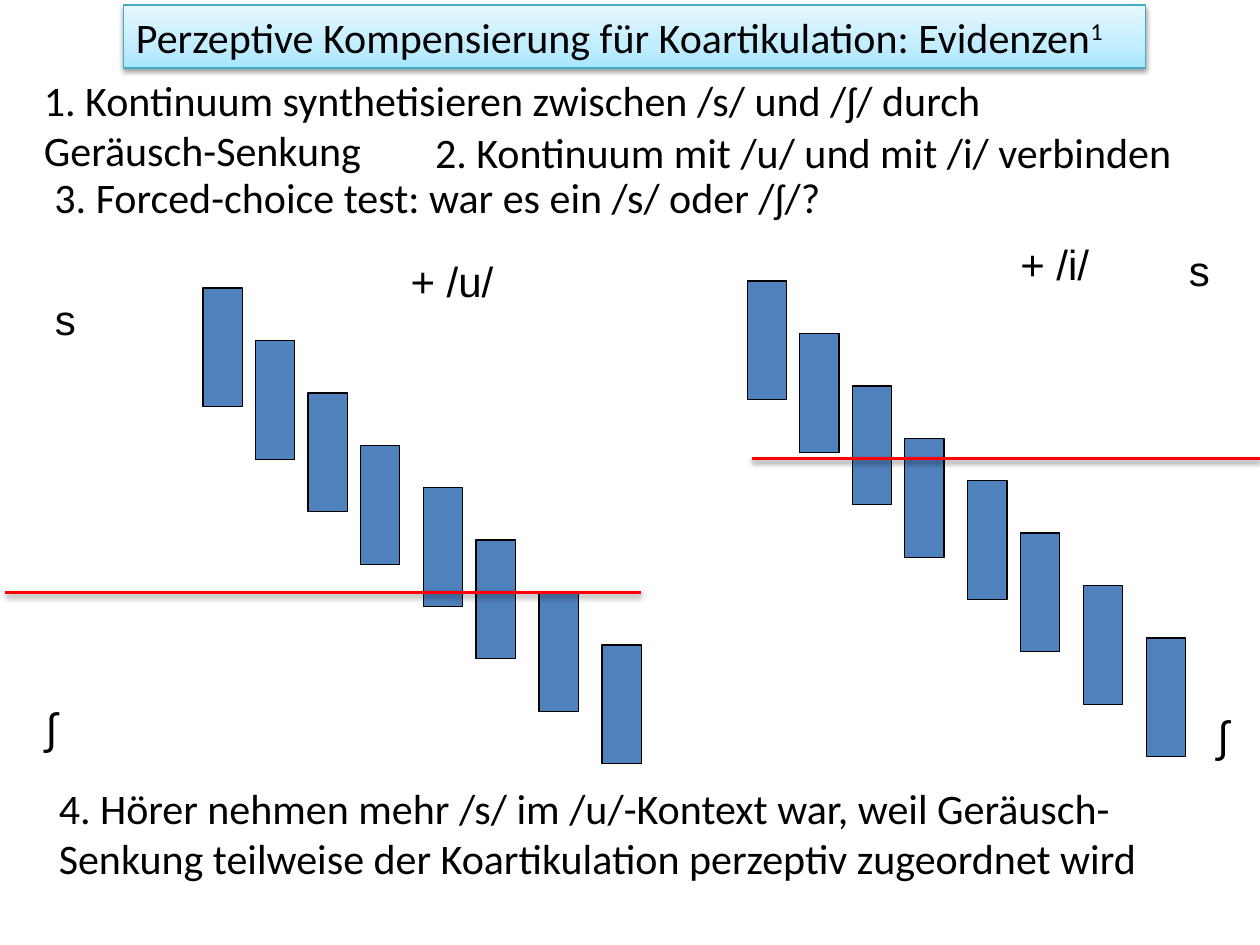
from copy import deepcopy

from pptx import Presentation
from pptx.dml.color import RGBColor
from pptx.enum.shapes import MSO_CONNECTOR as CONNECTOR, MSO_SHAPE as SHAPE
from pptx.enum.text import MSO_ANCHOR as ANCHOR, MSO_AUTO_SIZE as AUTO_SIZE, PP_ALIGN as ALIGN
from pptx.oxml import parse_xml
from pptx.oxml.ns import nsdecls, qn
from pptx.util import Pt

COLORS = {
    "text": "000000",
    "bar": "4F81BD",
    "boundary": "FF0000",
    "title_line": "46AAC5",
    "title_bottom": "A7E6FF",
    "title_middle": "C1EDFF",
    "title_top": "E7F8FF",
}
COLORS = {name: RGBColor.from_string(value) for name, value in COLORS.items()}


def write(frame, text, font="Calibri", wrap=True, superscript=""):
    frame.word_wrap = wrap
    frame.auto_size = AUTO_SIZE.NONE
    frame.vertical_anchor = ANCHOR.TOP
    para = frame.paragraphs[0]
    para.alignment = ALIGN.LEFT
    for part, baseline in ((text, 0), (superscript, 30000)):
        if part:
            span = para.add_run()
            span.text = part
            span.font.name = font
            span.font.size = Pt(24)
            span.font.color.rgb = COLORS["text"]
            if baseline:
                span.font._element.set("baseline", str(baseline))


def add_shadow(shape):
    shape._element.spPr.append(parse_xml(
        f'<a:effectLst {nsdecls("a")}>'
        f'<a:outerShdw blurRad="{Pt(3.1)}" dist="{Pt(1.6)}" dir="5400000" rotWithShape="0">'
        '<a:srgbClr val="000000"><a:alpha val="38000"/></a:srgbClr>'
        '</a:outerShdw></a:effectLst>'))


deck = Presentation()
deck.slide_width, deck.slide_height = Pt(720), Pt(540)
page = deck.slides.add_slide(deck.slide_layouts[5])

title = page.shapes.title
title.left, title.top, title.width, title.height = Pt(70.5), Pt(2.8), Pt(584), Pt(36)
title.fill.gradient()
title.fill.gradient_angle = 90
stop_list = title._element.spPr.find(".//" + qn("a:gsLst"))
stop_list.insert(1, deepcopy(stop_list[0]))
stops = ((0, "title_bottom"), (0.35, "title_middle"), (1, "title_top"))
for stop, (position, color) in zip(title.fill.gradient_stops, stops):
    stop.position = position
    stop.color.rgb = COLORS[color]
title.line.color.rgb = COLORS["title_line"]
title.line.width = Pt(0.75)
add_shadow(title)
write(title.text_frame, "Perzeptive Kompensierung für Koartikulation: Evidenzen", superscript="1")

bar_steps = [(0, 0), (30, 30), (60, 60), (90, 90), (126, 114), (156, 144), (192, 174), (228, 204)]
for series_left, series_top in ((116, 164.5), (427, 160.5)):
    for step_x, step_y in bar_steps:
        bar = page.shapes.add_shape(
            SHAPE.RECTANGLE, Pt(series_left + step_x), Pt(series_top + step_y), Pt(22.5), Pt(68))
        bar.shadow.inherit = False
        bar.fill.solid()
        bar.fill.fore_color.rgb = COLORS["bar"]
        bar.line.color.rgb = COLORS["text"]
        bar.line.width = Pt(0.75)

labels = [
    (18, 39, 555, 65.5, "1. Kontinuum synthetisieren zwischen /s/ und /ʃ/ durch Geräusch-Senkung", {}),
    (241.5, 68.5, 459, 36, "2. Kontinuum mit /u/ und mit /i/ verbinden", {}),
    (24, 94.5, 478, 36, "3. Forced-choice test: war es ein /s/ oder /ʃ/?", {}),
    (26.5, 443.5, 660, 65.5, "4. Hörer nehmen mehr /s/ im /u/-Kontext war, weil Geräusch-Senkung "
     "teilweise der Koartikulation perzeptiv zugeordnet wird", {}),
    (227.5, 142.5, 62, 36, "+ /u/", {"font": "Arial", "wrap": False}),
    (576, 132.5, 55, 36, "+ /i/", {"font": "Arial", "wrap": False}),
    (26.5, 164, 12, 36.5, "s", {"font": "Arial"}),
    (674.5, 136, 12, 36.5, "s", {"font": "Arial"}),
    (17.5, 398, 30, 36.5, "ʃ", {"font": "Roboto"}),
    (687, 402.5, 30, 36.5, "ʃ", {"font": "Roboto"}),
]
for left, top, width, height, text, style in labels:
    box = page.shapes.add_textbox(Pt(left), Pt(top), Pt(width), Pt(height))
    write(box.text_frame, text, **style)

for start, end, height in ((3, 366.5, 338.5), (429.5, 720, 262)):
    boundary = page.shapes.add_connector(CONNECTOR.STRAIGHT, Pt(start), Pt(height), Pt(end), Pt(height))
    boundary.line.color.rgb = COLORS["boundary"]
    boundary.line.width = Pt(2)
    add_shadow(boundary)

deck.save("out.pptx")
